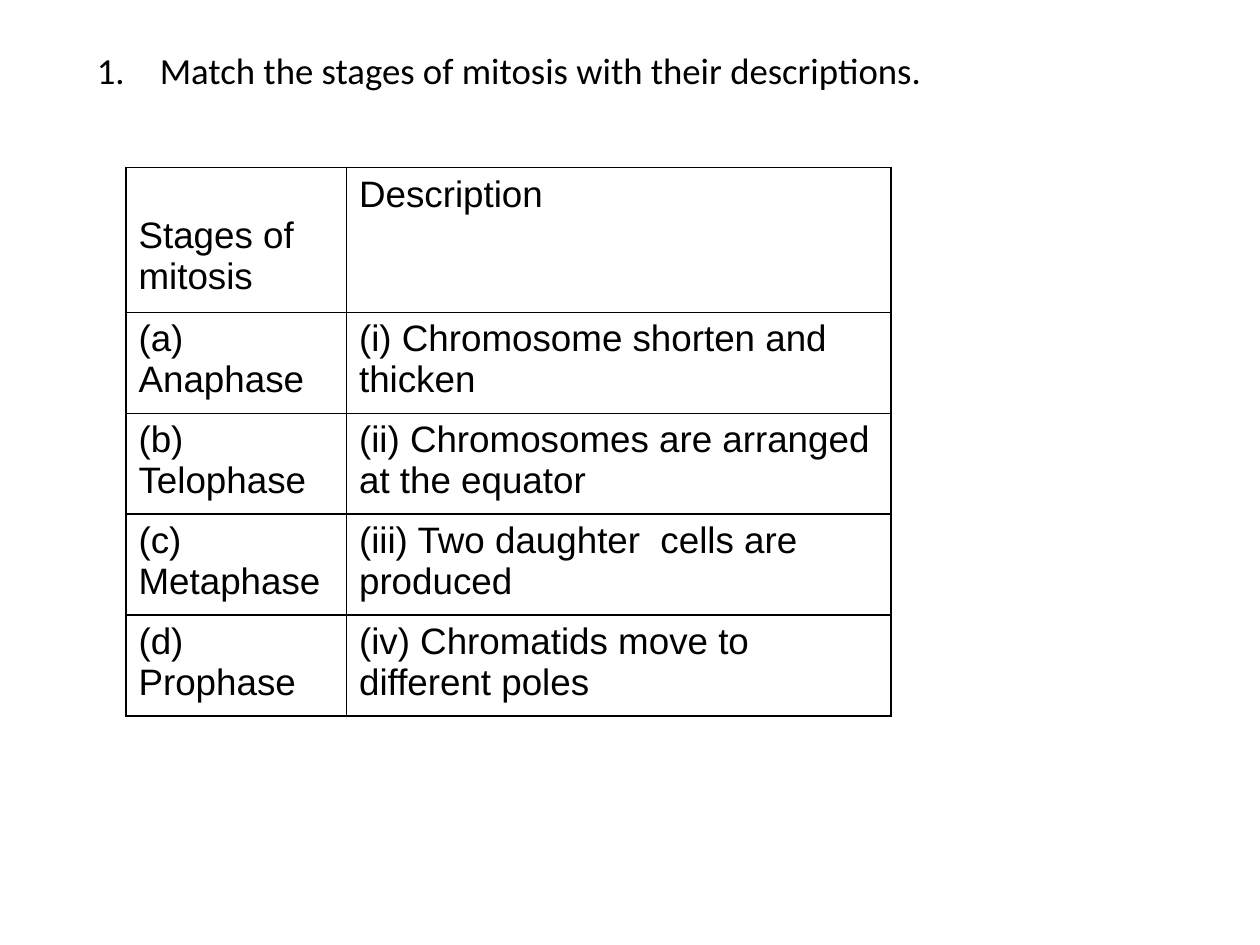
from lxml import etree
from pptx import Presentation, util as u
from pptx.dml.color import RGBColor
from pptx.enum import text
from pptx.oxml import ns

TITLE = "1.\tMatch the stages of mitosis with their descriptions."
ROWS = [
    ("Stages of mitosis", "Description"),
    ("(a) Anaphase", "(i) Chromosome shorten and thicken"),
    ("(b) Telophase", "(ii) Chromosomes are arranged at the equator"),
    ("(c) Metaphase", "(iii) Two daughter  cells are produced"),
    ("(d) Prophase", "(iv) Chromatids move to different poles"),
]
THEME = {
    "ink": "000000", "paper": "FFFFFF", "size": 21, "border": 1,
    "title_font": "Calibri", "body_font": "Arial",
}
SLIDE = (10, 7.5)
TITLE_BOX = (0.67, 0.33, 7.69, 0.8)
TITLE_INDENT = 0.5
TABLE_AT = (1, 1.33)
COLS = (1.75, 4.32)
HEAD_HEIGHT, ROW_HEIGHT = 1.15, 0.8
HEAD_DROP = 0.38


def write(tf, words, font):
    r = tf.paragraphs[0].add_run()
    r.text = words
    for name, value in {"name": font, "size": u.Pt(THEME["size"])}.items():
        setattr(r.font, name, value)
    r.font.color.rgb = RGBColor.from_string(THEME["ink"])


def add_borders(cell):
    pr = cell._tc.get_or_add_tcPr()
    for i, side in enumerate(("lnL", "lnR", "lnT", "lnB")):
        ln = etree.Element(ns.qn("a:" + side), w=str(u.Pt(THEME["border"])))
        fill = etree.SubElement(ln, ns.qn("a:solidFill"))
        etree.SubElement(fill, ns.qn("a:srgbClr"), val=THEME["ink"])
        pr.insert(i, ln)


def add_title(s):
    tf = s.shapes.add_textbox(*map(u.Inches, TITLE_BOX)).text_frame
    for name, value in {"word_wrap": True, "vertical_anchor": text.MSO_ANCHOR.TOP}.items():
        setattr(tf, name, value)
    write(tf, TITLE, THEME["title_font"])
    pr = tf.paragraphs[0]._p.get_or_add_pPr()
    for name, sign in {"marL": 1, "indent": -1}.items():
        pr.set(name, str(sign * u.Inches(TITLE_INDENT)))


def add_stages(s):
    heights = [HEAD_HEIGHT] + [ROW_HEIGHT] * (len(ROWS) - 1)
    box = (*TABLE_AT, sum(COLS), sum(heights))
    table = s.shapes.add_table(len(ROWS), len(COLS), *map(u.Inches, box)).table
    for name, value in {"first_row": False, "horz_banding": False}.items():
        setattr(table, name, value)
    for col, width in zip(table.columns, COLS):
        col.width = u.Inches(width)
    for row, height, words in zip(table.rows, heights, ROWS):
        row.height = u.Inches(height)
        for cell, label in zip(row.cells, words):
            cell.fill.solid()
            cell.fill.fore_color.rgb = RGBColor.from_string(THEME["paper"])
            add_borders(cell)
            write(cell.text_frame, label, THEME["body_font"])
    table.cell(0, 0).margin_top = u.Inches(HEAD_DROP)


def main():
    prs = Presentation()
    prs.slide_width, prs.slide_height = map(u.Inches, SLIDE)
    s = prs.slides.add_slide(prs.slide_layouts[6])
    add_title(s)
    add_stages(s)
    prs.save("out.pptx")


if __name__ == "__main__":
    main()
